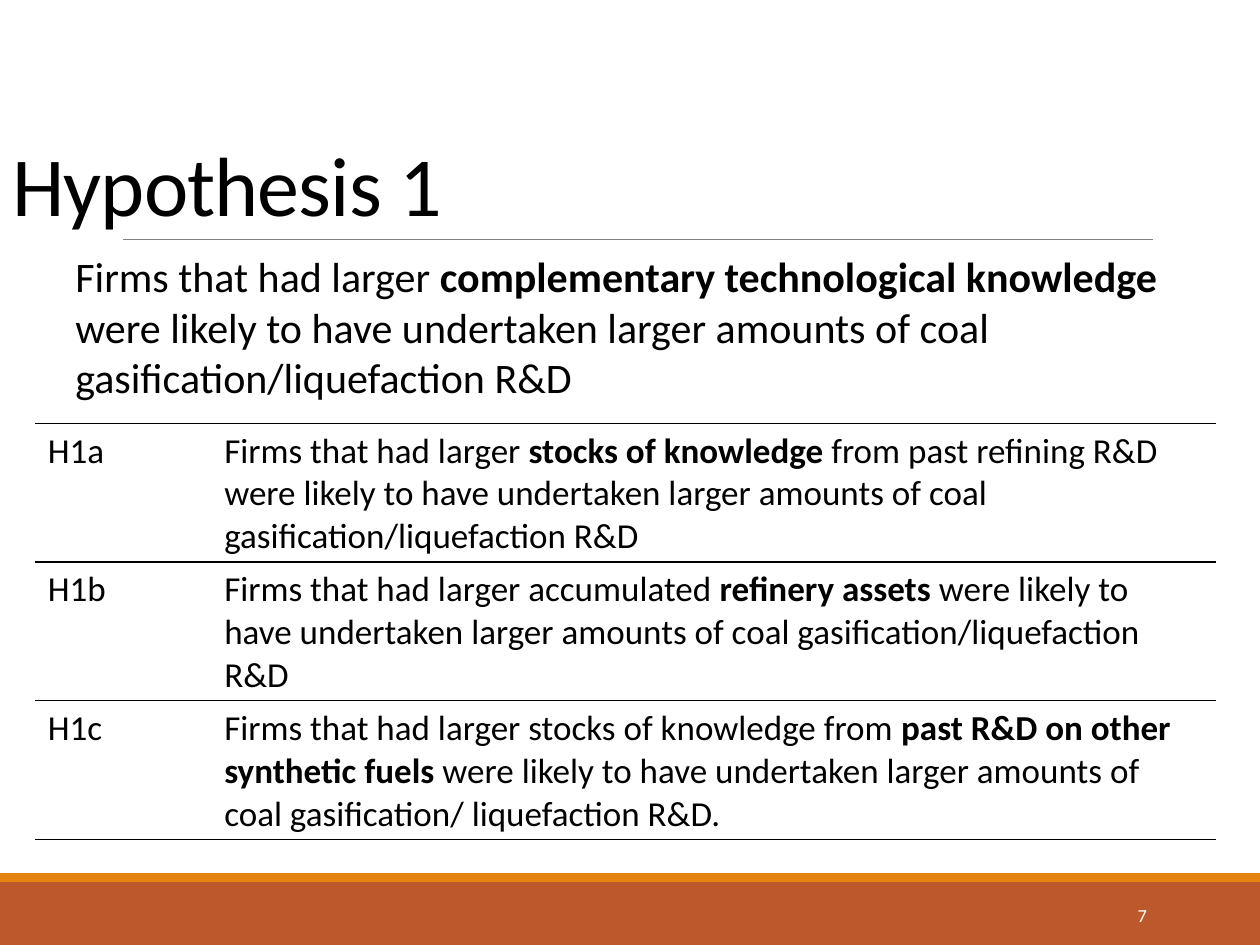
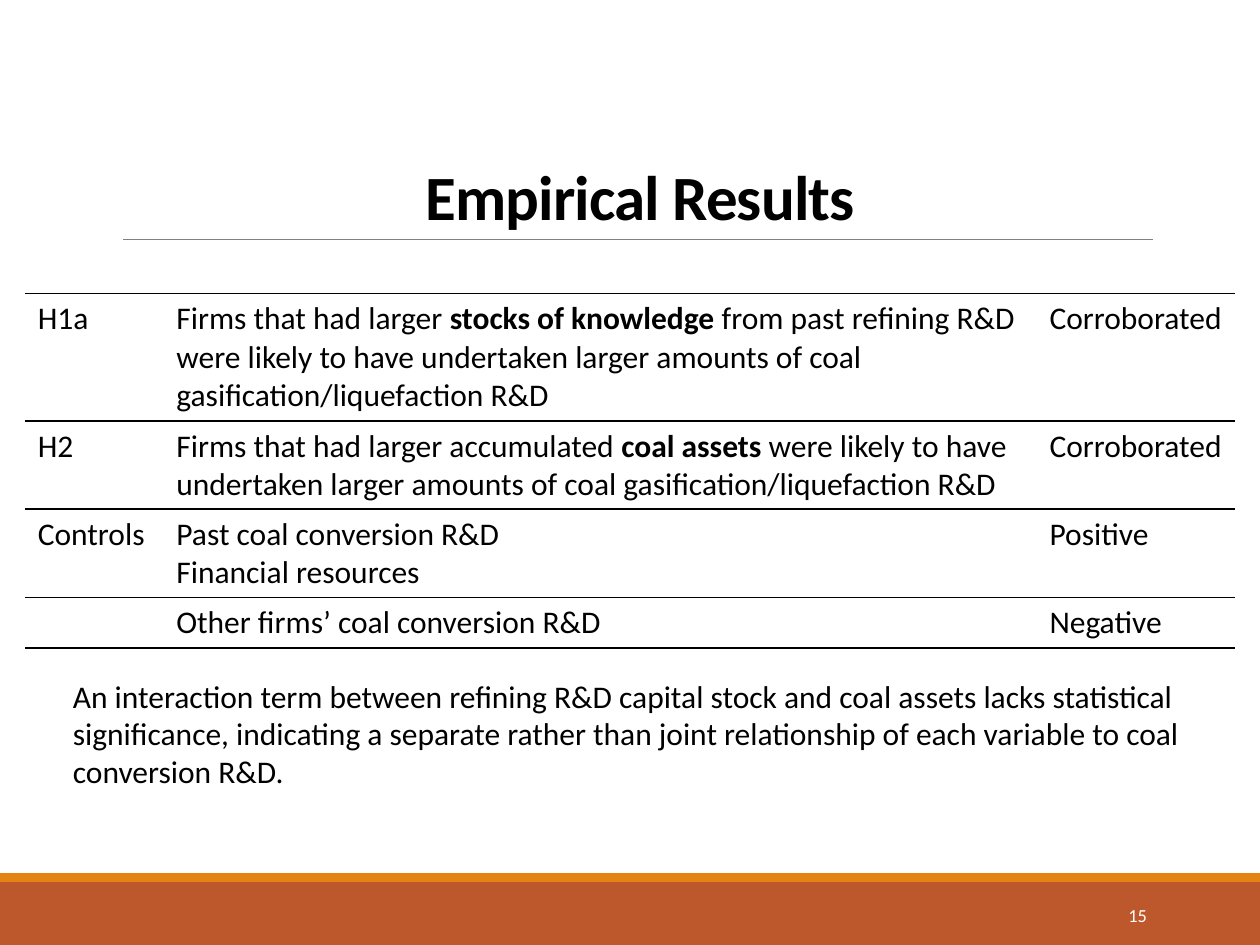
from dataclasses import dataclass

from lxml import etree
from pptx import Presentation
from pptx.dml.color import RGBColor
from pptx.enum.shapes import MSO_CONNECTOR, MSO_SHAPE
from pptx.enum.text import MSO_ANCHOR, PP_ALIGN
from pptx.oxml.ns import qn
from pptx.util import Emu, Pt

RECTANGLE = MSO_SHAPE.RECTANGLE
STRAIGHT = MSO_CONNECTOR.STRAIGHT
TOP, MIDDLE, BOTTOM = MSO_ANCHOR.TOP, MSO_ANCHOR.MIDDLE, MSO_ANCHOR.BOTTOM
LEFT, CENTER, RIGHT = PP_ALIGN.LEFT, PP_ALIGN.CENTER, PP_ALIGN.RIGHT

EMU_PER_PX = 9144  # 100 px to the inch
FONT = "Calibri"
COLORS = {
    "text": "000000",
    "page_number": "FFFFFF",
    "footer": "BD582C",
    "accent": "E48312",
    "rule": "808080",
    "border": "000000",
}
BOLD_MARK = "**"  # switches bold on and off inside a text


@dataclass(frozen=True)
class Box:
    left: int
    top: int
    width: int
    height: int

    def emu(self) -> tuple[Emu, ...]:
        return tuple(map(px, (self.left, self.top, self.width, self.height)))


@dataclass(frozen=True)
class TextBlock:
    box: Box
    text: str
    size: float
    color: str = "text"
    align: PP_ALIGN = LEFT
    anchor: MSO_ANCHOR = TOP
    line_spacing: float | None = None
    space_before: int = 0
    tracking: int = 0  # hundredths of a point


@dataclass(frozen=True)
class FindingsTable:
    left: int
    top: int
    columns: tuple[int, ...]
    row_heights: tuple[int, ...]
    size: int
    rows: tuple[tuple[str, ...], ...]


@dataclass(frozen=True)
class SlideContent:
    title: TextBlock
    number: str
    table: FindingsTable
    body: TextBlock


def px(length: int) -> Emu:
    return Emu(length * EMU_PER_PX)


def rgb(name: str) -> RGBColor:
    return RGBColor.from_string(COLORS[name])


def title_block(box: Box, text: str, size: int, align: PP_ALIGN = LEFT) -> TextBlock:
    return TextBlock(box, text, size, align=align, anchor=BOTTOM,
                     line_spacing=0.85, tracking=-50)


def write_text(text_frame, text: str, size: float, color: str = "text",
               tracking: int = 0) -> None:
    """Write one paragraph a line, with marked parts in bold."""
    for line_index, line in enumerate(text.split("\n")):
        paragraph = text_frame.add_paragraph() if line_index else text_frame.paragraphs[0]
        for part_index, part in enumerate(line.split(BOLD_MARK)):
            if not part:
                continue
            run = paragraph.add_run()
            run.text = part
            run.font.name = FONT
            run.font.size = Pt(size)
            run.font.bold = part_index % 2 == 1
            run.font.color.rgb = rgb(color)
            if tracking:
                run._r.get_or_add_rPr().set("spc", str(tracking))


def add_text(slide, block: TextBlock) -> None:
    text_frame = slide.shapes.add_textbox(*block.box.emu()).text_frame
    text_frame.word_wrap = True
    text_frame.vertical_anchor = block.anchor
    write_text(text_frame, block.text, block.size, block.color, block.tracking)
    for paragraph in text_frame.paragraphs:
        paragraph.alignment = block.align
        paragraph.space_before = Pt(block.space_before)
        if block.line_spacing:
            paragraph.line_spacing = block.line_spacing


def add_band(slide, box: Box, color: str) -> None:
    band = slide.shapes.add_shape(RECTANGLE, *box.emu())
    band.shadow.inherit = False
    band.fill.solid()
    band.fill.fore_color.rgb = rgb(color)
    band.line.fill.background()


def add_frame(slide, number: str) -> None:
    """Footer bands, title rule and page number."""
    add_band(slide, Box(0, 700, 1000, 50), "footer")
    add_band(slide, Box(0, 693, 1000, 7), "accent")
    rule = slide.shapes.add_connector(STRAIGHT, px(98), px(190), px(915), px(190))
    rule.line.color.rgb = rgb("rule")
    rule.line.width = Pt(0.5)
    etree.SubElement(rule._element.spPr, qn("a:effectLst"))
    add_text(slide, TextBlock(Box(812, 706, 108, 40), number, 10.5,
                              "page_number", RIGHT, MIDDLE))


def set_horizontal_borders(cell) -> None:
    """Draw the top and bottom borders and hide the side ones."""
    properties = cell._tc.get_or_add_tcPr()
    for index, side in enumerate(("lnL", "lnR", "lnT", "lnB")):
        line = etree.Element(qn(f"a:{side}"), w=str(Pt(1)))
        if side in ("lnT", "lnB"):
            fill = etree.SubElement(line, qn("a:solidFill"))
            etree.SubElement(fill, qn("a:srgbClr"), val=COLORS["border"])
        else:
            etree.SubElement(line, qn("a:noFill"))
        properties.insert(index, line)


def add_findings(slide, findings: FindingsTable) -> None:
    box = Box(findings.left, findings.top, sum(findings.columns), sum(findings.row_heights))
    table = slide.shapes.add_table(
        len(findings.rows), len(findings.columns), *box.emu()).table
    table.first_row = table.horz_banding = False
    for column, width in zip(table.columns, findings.columns):
        column.width = px(width)
    for row, height, texts in zip(table.rows, findings.row_heights, findings.rows):
        row.height = px(height)
        for cell, text in zip(row.cells, texts):
            cell.fill.background()
            set_horizontal_borders(cell)
            write_text(cell.text_frame, text, findings.size)


# Wording shared by the hypotheses
OUTCOME = "were likely to have undertaken larger amounts of coal gasification/liquefaction R&D"
H1A = f"Firms that had larger **stocks of knowledge** from past refining R&D {OUTCOME}"

SLIDES = (
    SlideContent(
        title=title_block(Box(0, 31, 1000, 159), "Hypothesis 1", 48),
        number="7",
        table=FindingsTable(
            28, 336, (140, 797), (110, 110, 110), 20,
            (
                ("H1a", H1A),
                ("H1b", f"Firms that had larger accumulated **refinery assets** {OUTCOME}"),
                ("H1c", "Firms that had larger stocks of knowledge from **past R&D on other "
                        "synthetic fuels** were likely to have undertaken larger amounts of "
                        "coal gasification/ liquefaction R&D."),
            ),
        ),
        body=TextBlock(
            Box(50, 194, 900, 131),
            f"Firms that had larger **complementary technological knowledge** {OUTCOME}", 24),
    ),
    SlideContent(
        title=title_block(Box(4, 31, 1008, 159), "**Empirical Results**", 36, CENTER),
        number="15",
        table=FindingsTable(
            20, 233, (110, 693, 157), (101, 70, 70, 40), 18,
            (
                ("H1a", H1A, "Corroborated"),
                ("H2", f"Firms that had larger accumulated **coal assets** {OUTCOME}",
                 "Corroborated"),
                ("Controls", "Past coal conversion R&D\nFinancial resources", "Positive"),
                ("", "Other firms’ coal conversion R&D", "Negative"),
            ),
        ),
        body=TextBlock(
            Box(48, 532, 932, 195),
            "An interaction term between refining R&D capital stock and coal assets lacks "
            "statistical significance, indicating a separate rather than joint relationship "
            "of each variable to coal conversion R&D.", 18, space_before=12),
    ),
)


def main() -> None:
    presentation = Presentation()
    presentation.slide_width, presentation.slide_height = px(1000), px(750)
    blank_layout = presentation.slide_layouts[6]
    for content in SLIDES:
        slide = presentation.slides.add_slide(blank_layout)
        add_frame(slide, content.number)
        add_text(slide, content.title)
        add_findings(slide, content.table)
        add_text(slide, content.body)
    presentation.save("out.pptx")


if __name__ == "__main__":
    main()
